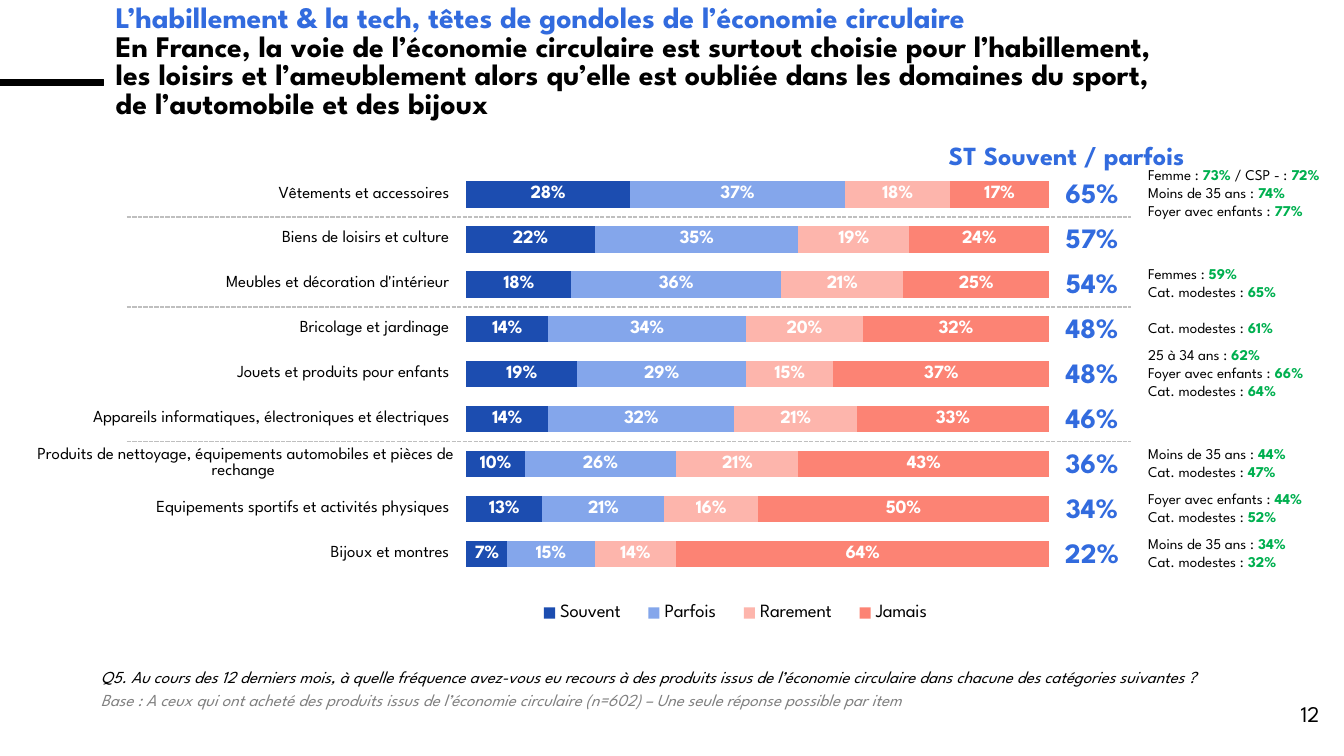
from dataclasses import dataclass

from lxml import etree
from pptx import Presentation
from pptx.chart.data import CategoryChartData
from pptx.dml.color import RGBColor
from pptx.enum.chart import XL_CHART_TYPE, XL_LABEL_POSITION, XL_LEGEND_POSITION, XL_TICK_MARK
from pptx.enum.dml import MSO_LINE
from pptx.enum.shapes import MSO_CONNECTOR, MSO_SHAPE
from pptx.enum.text import MSO_ANCHOR, PP_ALIGN
from pptx.oxml import parse_xml
from pptx.oxml.ns import nsdecls, qn
from pptx.util import Pt

LEFT, CENTER, RIGHT = PP_ALIGN.LEFT, PP_ALIGN.CENTER, PP_ALIGN.RIGHT
TOP, MIDDLE = MSO_ANCHOR.TOP, MSO_ANCHOR.MIDDLE
BARS = XL_CHART_TYPE.BAR_STACKED_100
LABEL_CENTER = XL_LABEL_POSITION.CENTER
LEGEND_BOTTOM = XL_LEGEND_POSITION.BOTTOM
TICK_OUTSIDE = XL_TICK_MARK.OUTSIDE
DASHED = MSO_LINE.SQUARE_DOT


@dataclass(frozen=True)
class Theme:
    font: str = "League Spartan"
    black: RGBColor = RGBColor(0, 0, 0)
    white: RGBColor = RGBColor(255, 255, 255)
    blue: RGBColor = RGBColor.from_string("326BDE")
    green: RGBColor = RGBColor.from_string("00B050")
    gray: RGBColor = RGBColor.from_string("808080")
    rule: RGBColor = RGBColor.from_string("BFBFBF")
    series: tuple = ("1C4DB0", "84A6EB", "FDB5AC", "FC8374")
    title: int = 16
    heading: int = 14
    total: int = 15
    page: int = 12
    label: int = 10
    small: int = 9
    note: int = 8


THEME = Theme()

TITLE = "L’habillement & la tech, têtes de gondoles de l’économie circulaire"
SUBTITLE_LINES = (
    "En France, la voie de l’économie circulaire est surtout choisie pour l’habillement,",
    "les loisirs et l’ameublement alors qu’elle est oubliée dans les domaines du sport,",
    "de l’automobile et des bijoux",
)
QUESTION = ("Q5. Au cours des 12 derniers mois, à quelle fréquence avez-vous eu recours à des produits "
            "issus de l’économie circulaire dans chacune des catégories suivantes ?")
BASE = ("Base : A ceux qui ont acheté des produits issus de l’économie circulaire (n=602) "
        "– Une seule réponse possible par item")

SERIES = ("Souvent ", "Parfois ", "Rarement ", "Jamais ")
# Category, share per series, total, notes as lines of alternating caption and figure
ROWS = [
    ("Vêtements et accessoires ", (0.28, 0.37, 0.18, 0.17), "65%",
     [("Femme : ", "73%", " / CSP - : ", "72%"), ("Moins de 35 ans : ", "74%"),
      ("Foyer avec enfants : ", "77%")]),
    ("Biens de loisirs et culture ", (0.22, 0.35, 0.19, 0.24), "57%", []),
    ("Meubles et décoration d'intérieur ", (0.18, 0.36, 0.21, 0.25), "54%",
     [("Femmes : ", "59%"), ("Cat. modestes : ", "65%")]),
    ("Bricolage et jardinage ", (0.14, 0.34, 0.2, 0.32), "48%", [("Cat. modestes : ", "61%")]),
    ("Jouets et produits pour enfants ", (0.19, 0.29, 0.15, 0.37), "48%",
     [("25 à 34 ans : ", "62%"), ("Foyer avec enfants : ", "66%"), ("Cat. modestes : ", "64%")]),
    ("Appareils informatiques, électroniques et électriques ", (0.14, 0.32, 0.21, 0.33), "46%", []),
    ("Produits de nettoyage, équipements automobiles et pièces de rechange ",
     (0.1, 0.26, 0.21, 0.43), "36%", [("Moins de 35 ans : ", "44%"), ("Cat. modestes : ", "47%")]),
    ("Equipements sportifs et activités physiques ", (0.13, 0.21, 0.16, 0.5), "34%",
     [("Foyer avec enfants : ", "44%"), ("Cat. modestes : ", "52%")]),
    ("Bijoux et montres ", (0.07, 0.15, 0.14, 0.64), "22%",
     [("Moins de 35 ans : ", "34%"), ("Cat. modestes : ", "32%")]),
]
GROUP_ENDS = (1, 3, 6)
# Fractions of the chart box
PLOT = {"x": 0.42, "y": 0.02, "w": 0.58, "h": 0.83}
LEGEND = {"x": 0.48, "y": 0.89, "w": 0.42, "h": 0.07}


def style(font, size, color, bold=None, italic=None):
    font.name, font.size, font.bold, font.italic = THEME.font, Pt(size), bold, italic
    font.color.rgb = color


def add_text(slide, box, lines, size, align=LEFT, anchor=TOP, spacing=None, inset=True,
             bold=None, italic=None):
    """Each line is a list of (text, colour, bold) runs; bold and italic apply to the whole box."""
    frame = slide.shapes.add_textbox(*map(Pt, box)).text_frame
    frame.word_wrap, frame.vertical_anchor = True, anchor
    if not inset:
        frame.margin_left = frame.margin_top = frame.margin_right = frame.margin_bottom = 0
    for index, runs in enumerate(lines):
        paragraph = frame.add_paragraph() if index else frame.paragraphs[0]
        paragraph.alignment, paragraph.line_spacing = align, spacing
        style(paragraph.font, size, runs[0][1], bold, italic)
        for text, color, run_bold in runs:
            run = paragraph.add_run()
            run.text = text
            style(run.font, size, color, run_bold or bold, italic)


def add_header(slide, box):
    left, top, width, height = box
    bar = slide.shapes.add_shape(MSO_SHAPE.RECTANGLE, Pt(left), Pt(top + 39.5), Pt(55.5), Pt(3.5))
    bar.shadow.inherit = False
    bar.fill.solid()
    bar.fill.fore_color.rgb = bar.line.color.rgb = THEME.black
    bar.line.width = Pt(0.75)
    lines = [[(TITLE, THEME.blue, True)]]
    lines += [[(line, THEME.black, True)] for line in SUBTITLE_LINES]
    add_text(slide, (left + 62, top, width - 62, height), lines, THEME.title,
             spacing=0.8, inset=False, bold=True)


def add_frequency_chart(slide, box):
    data = CategoryChartData(number_format="0%")
    data.categories = [row[0] for row in ROWS]
    for index, name in enumerate(SERIES):
        data.add_series(name, [row[1][index] for row in ROWS])
    chart = slide.shapes.add_chart(BARS, *map(Pt, box), data).chart
    style(chart.font, THEME.label, THEME.black)
    chart.has_title = False
    chart.has_legend = True
    chart.legend.position, chart.legend.include_in_layout = LEGEND_BOTTOM, False
    style(chart.legend.font, THEME.label, THEME.black)

    categories, values = chart.category_axis, chart.value_axis
    categories.reverse_order = True
    categories.major_tick_mark = TICK_OUTSIDE
    categories.format.line.fill.background()
    style(categories.tick_labels.font, THEME.small, THEME.black)
    values.minimum_scale, values.maximum_scale = 0, 1
    values.has_major_gridlines = values.visible = False

    plot = chart.plots[0]
    plot.gap_width, plot.overlap, plot.vary_by_categories = 70, 100, False
    for series, color in zip(plot.series, THEME.series):
        series.format.fill.solid()
        series.format.fill.fore_color.rgb = RGBColor.from_string(color)
        labels = series.data_labels
        labels.show_value, labels.position = True, LABEL_CENTER
        labels.number_format, labels.number_format_is_linked = "0%", False
        style(labels.font, THEME.label, THEME.white, bold=True)

    chart_element = chart._chartSpace.chart
    set_layout(chart_element.plotArea, 0, PLOT, '<c:layoutTarget val="inner"/>')
    set_layout(chart_element.find(qn("c:legend")), 1, LEGEND)


def set_layout(element, position, fractions, target=""):
    """Fix a chart part in place; position is where the schema wants the layout element."""
    for layout in element.findall(qn("c:layout")):
        element.remove(layout)
    sizes = "".join(f'<c:{key} val="{value}"/>' for key, value in fractions.items())
    element.insert(position, parse_xml(
        f'<c:layout {nsdecls("c")}><c:manualLayout>{target}'
        f'<c:xMode val="edge"/><c:yMode val="edge"/>{sizes}</c:manualLayout></c:layout>'))


def add_row_details(slide, box):
    """Totals, notes and group rules, spread over the rows of the chart."""
    left, top, width, height = box
    pitch = height / len(ROWS)
    add_text(slide, (left - 62, top - 21, 147, 25),
             [[("ST Souvent / parfois", THEME.blue, True)]], THEME.heading, CENTER, bold=True)
    for index, (_, _, total, notes) in enumerate(ROWS):
        middle = top + (index + 0.5) * pitch - 1
        add_text(slide, (left, middle - 12.5, 50, 25), [[(total, THEME.blue, True)]],
                 THEME.total, CENTER, MIDDLE, bold=True)
        if notes:
            lines = [[(text, THEME.green if place % 2 else THEME.black, place % 2 == 1)
                      for place, text in enumerate(line)] for line in notes]
            note_height = 7.2 + 9.6 * len(notes)
            add_text(slide, (left + 48, middle - note_height / 2, width - 48, note_height),
                     lines, THEME.note, anchor=MIDDLE)
    for end in GROUP_ENDS:
        y = Pt(top + end * pitch)
        rule = slide.shapes.add_connector(MSO_CONNECTOR.STRAIGHT, Pt(68), y, Pt(left + 46), y)
        rule.line.color.rgb, rule.line.width = THEME.rule, Pt(0.75)
        rule.line.dash_style = DASHED
        etree.SubElement(rule._element.spPr, qn("a:effectLst"))


def add_footer(slide, box):
    left, top, width, height = box
    add_text(slide, (left, top, 650, height),
             [[(QUESTION, THEME.black, None)], [(BASE, THEME.gray, None)]],
             THEME.small, spacing=1.15, italic=True)
    add_text(slide, (left + width - 47.5, top + 19.5, 47.5, 21.5), [[("12", THEME.black, None)]],
             THEME.page, RIGHT, MIDDLE)


def main():
    presentation = Presentation()
    presentation.slide_width, presentation.slide_height = Pt(720), Pt(405)
    slide = presentation.slides.add_slide(presentation.slide_layouts[6])
    _, chart_top, _, chart_height = chart_box = (20, 87, 542, 261)
    add_header(slide, (0, 3, 714, 62))
    add_frequency_chart(slide, chart_box)
    add_row_details(slide, (560, chart_top + PLOT["y"] * chart_height, 160,
                            PLOT["h"] * chart_height))
    add_footer(slide, (47, 352, 667, 44))
    presentation.save("out.pptx")


if __name__ == "__main__":
    main()
